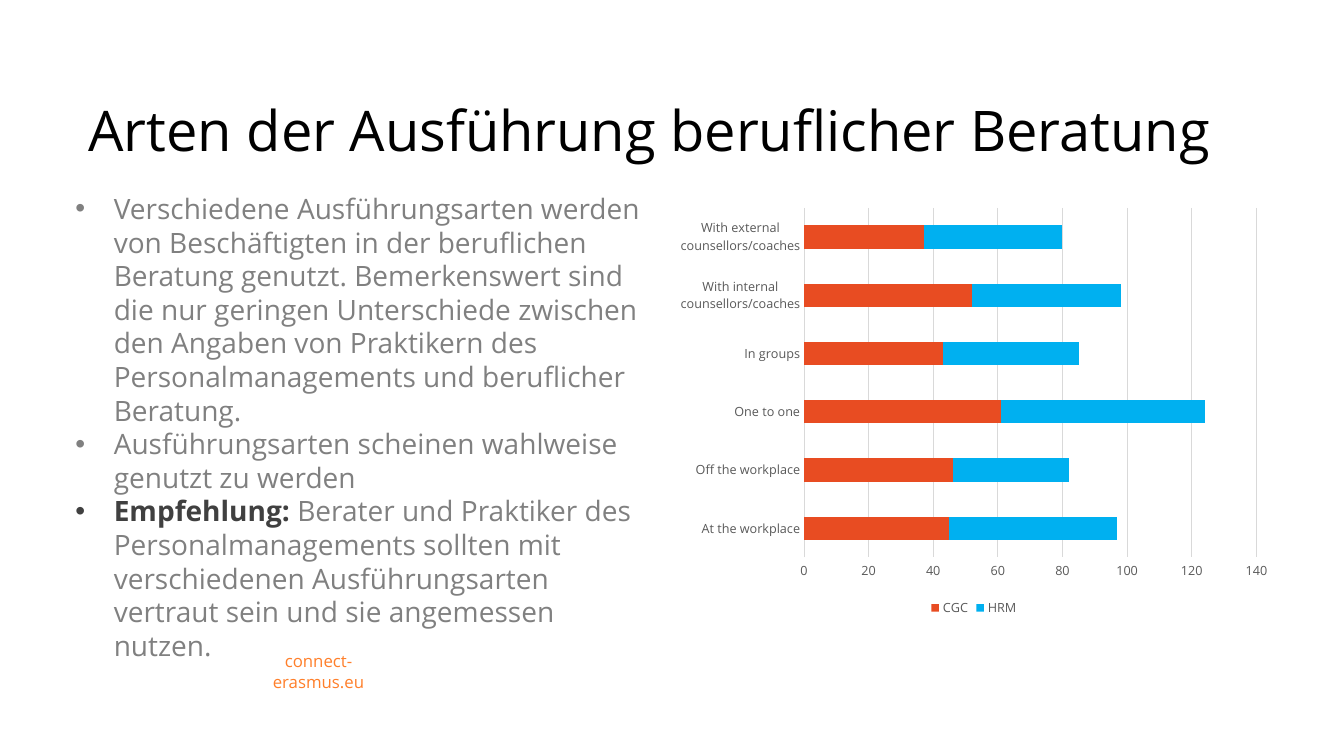
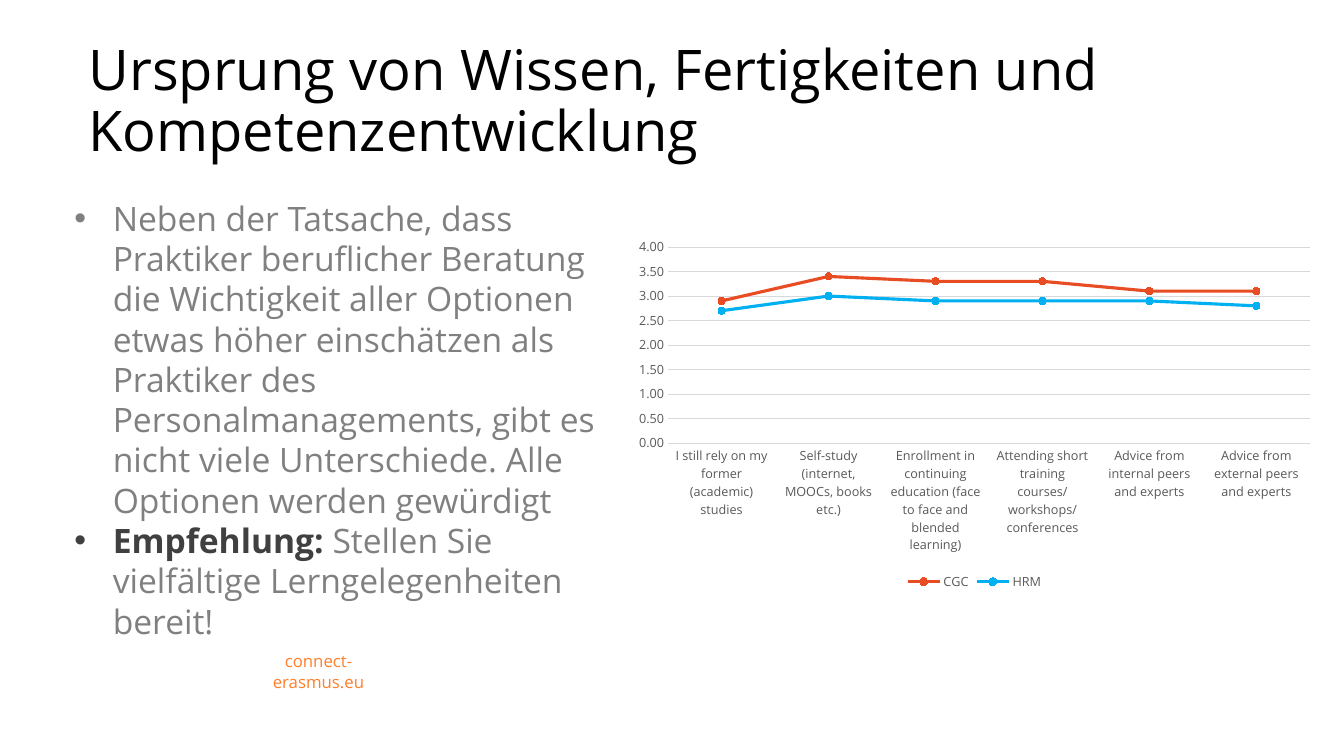
from lxml import etree
from pptx import Presentation
from pptx.chart.data import CategoryChartData
from pptx.dml.color import RGBColor
from pptx.enum.chart import (
    XL_CHART_TYPE, XL_LEGEND_POSITION, XL_MARKER_STYLE, XL_TICK_MARK)
from pptx.enum.text import MSO_ANCHOR, PP_ALIGN
from pptx.oxml.ns import qn
from pptx.util import Inches, Pt

BAR = XL_CHART_TYPE.BAR_STACKED
LINE = XL_CHART_TYPE.LINE_MARKERS
BELOW = XL_LEGEND_POSITION.BOTTOM
DOT = XL_MARKER_STYLE.CIRCLE
NO_TICK = XL_TICK_MARK.NONE
TOP, MID, LOW = MSO_ANCHOR.TOP, MSO_ANCHOR.MIDDLE, MSO_ANCHOR.BOTTOM
LEFT, CENTER = PP_ALIGN.LEFT, PP_ALIGN.CENTER

FONT = "Open Sans"
COLORS = {
    "title": "000000", "body": "808080", "lead": "404040",
    "footer": "FF7F2A", "label": "595959", "grid": "D9D9D9",
    "CGC": "E84C22", "HRM": "00B0F0",
}


def color(name):
    return RGBColor.from_string(COLORS[name])


def style(font, size, name, bold=False):
    font.name = FONT
    font.size = Pt(size)
    font.bold = bold
    font.color.rgb = color(name)


def add_frame(slide, box, anchor):
    frame = slide.shapes.add_textbox(*map(Inches, box)).text_frame
    frame.word_wrap = True
    frame.vertical_anchor = anchor
    return frame


def add_label(slide, box, text, size, name, anchor, align):
    frame = add_frame(slide, box, anchor)
    frame.text = text
    para = frame.paragraphs[0]
    para.alignment = align
    style(para.runs[0].font, size, name)
    return frame


# Title and footer shared by the slides
def add_base(deck, title, width):
    slide = deck.slides.add_slide(deck.slide_layouts[6])
    head = add_label(slide, (0.78, 0.07, width, 1.6), title, 40, "title",
                     LOW, LEFT)
    head.paragraphs[0].line_spacing = 0.9
    foot = add_label(slide, (2.28, 6.51, 1.76, 0.3), "connect-erasmus.eu", 12,
                     "footer", MID, CENTER)
    foot.margin_left = foot.margin_right = Inches(0.15)
    return slide


# Bulleted text; each item is a bold lead (may be empty) and its text
def add_bullets(slide, box, size, items):
    frame = add_frame(slide, box, TOP)
    for i, (lead, text) in enumerate(items):
        para = frame.add_paragraph() if i else frame.paragraphs[0]
        props = para._p.get_or_add_pPr()
        props.set("marL", str(Inches(0.38)))
        props.set("indent", str(-Inches(0.38)))
        etree.SubElement(props, qn("a:buFont")).set("typeface", "Arial")
        etree.SubElement(props, qn("a:buChar")).set("char", "•")
        for part, name in ((lead, "lead"), (text, "body")):
            if part:
                run = para.add_run()
                run.text = part
                style(run.font, size, name, name == "lead")


def style_axis(axis):
    axis.major_tick_mark = axis.minor_tick_mark = NO_TICK
    style(axis.tick_labels.font, 9, "label")


def add_chart(slide, kind, box, cats, rows, top, step, form):
    data = CategoryChartData()
    data.categories = cats
    for name, vals in rows.items():
        data.add_series(name, vals)
    chart = slide.shapes.add_chart(kind, *map(Inches, box), data).chart
    style(chart.font, 10, "title")
    chart.has_title = False
    chart.has_legend = True
    chart.legend.position = BELOW
    chart.legend.include_in_layout = False
    style(chart.legend.font, 9, "label")

    # Axes
    cat, val = chart.category_axis, chart.value_axis
    style_axis(cat)
    style_axis(val)
    val.minimum_scale, val.maximum_scale, val.major_unit = 0, top, step
    val.tick_labels.number_format = form
    val.tick_labels.number_format_is_linked = False
    val.format.line.fill.background()
    val.has_major_gridlines = True
    for line in (cat.format.line, val.major_gridlines.format.line):
        line.color.rgb = color("grid")
        line.width = Pt(0.75)

    # Series
    plot = chart.plots[0]
    plot.vary_by_categories = False
    if kind == BAR:
        plot.gap_width, plot.overlap = 150, 100
    for row in plot.series:
        shade = color(row.name)
        if kind == BAR:
            fills = [row.format.fill]
        else:
            row.smooth = False
            row.format.line.color.rgb = shade
            row.format.line.width = Pt(2.25)
            row.marker.style, row.marker.size = DOT, 5
            row.marker.format.line.color.rgb = shade
            fills = [row.marker.format.fill]
        for fill in fills:
            fill.solid()
            fill.fore_color.rgb = shade


def add_modes(deck):
    slide = add_base(deck, "Arten der Ausführung beruflicher Beratung", 11.69)
    add_bullets(slide, (0.65, 1.85, 5.85, 4.77), 20, [
        ("", "Verschiedene Ausführungsarten werden von Beschäftigten in der "
             "beruflichen Beratung genutzt. Bemerkenswert sind die nur "
             "geringen Unterschiede zwischen den Angaben von Praktikern des "
             "Personalmanagements und beruflicher Beratung."),
        ("", "Ausführungsarten scheinen wahlweise genutzt zu werden"),
        ("Empfehlung: ",
         "Berater und Praktiker des Personalmanagements sollten mit "
         "verschiedenen Ausführungsarten vertraut sein und sie angemessen "
         "nutzen."),
    ])
    cats = ["At the workplace", "Off the workplace", "One to one",
            "In groups", "With internal counsellors/coaches",
            "With external counsellors/coaches"]
    rows = {"CGC": (45, 46, 61, 43, 52, 37), "HRM": (52, 36, 63, 42, 46, 43)}
    add_chart(slide, BAR, (6.63, 1.98, 6.06, 4.18), cats, rows,
              140, 20, "###0")


def add_skills(deck):
    slide = add_base(deck, "Ursprung von Wissen, Fertigkeiten und "
                           "Kompetenzentwicklung", 12.35)
    add_bullets(slide, (0.64, 1.91, 5.48, 4.37), 24, [
        ("", "Neben der Tatsache, dass Praktiker beruflicher Beratung die "
             "Wichtigkeit aller Optionen etwas höher einschätzen als "
             "Praktiker des Personalmanagements, gibt es nicht viele "
             "Unterschiede. Alle Optionen werden gewürdigt"),
        ("Empfehlung: ", "Stellen Sie vielfältige Lerngelegenheiten bereit!"),
    ])
    cats = ["I still rely on my former (academic) studies",
            "Self-study (internet, MOOCs, books etc.)",
            "Enrollment in continuing education (face to face and blended "
            "learning)",
            "Attending short training courses/workshops/conferences",
            "Advice from internal peers and experts",
            "Advice from external peers and experts"]
    rows = {"CGC": (2.9, 3.4, 3.3, 3.3, 3.1, 3.1),
            "HRM": (2.7, 3, 2.9, 2.9, 2.9, 2.8)}
    add_chart(slide, LINE, (6.2, 2.29, 6.93, 3.61), cats, rows,
              4, 0.5, "###0.00")


def main():
    deck = Presentation()
    deck.slide_width, deck.slide_height = Inches(13.33), Inches(7.5)
    add_modes(deck)
    add_skills(deck)
    deck.save("out.pptx")


if __name__ == "__main__":
    main()
